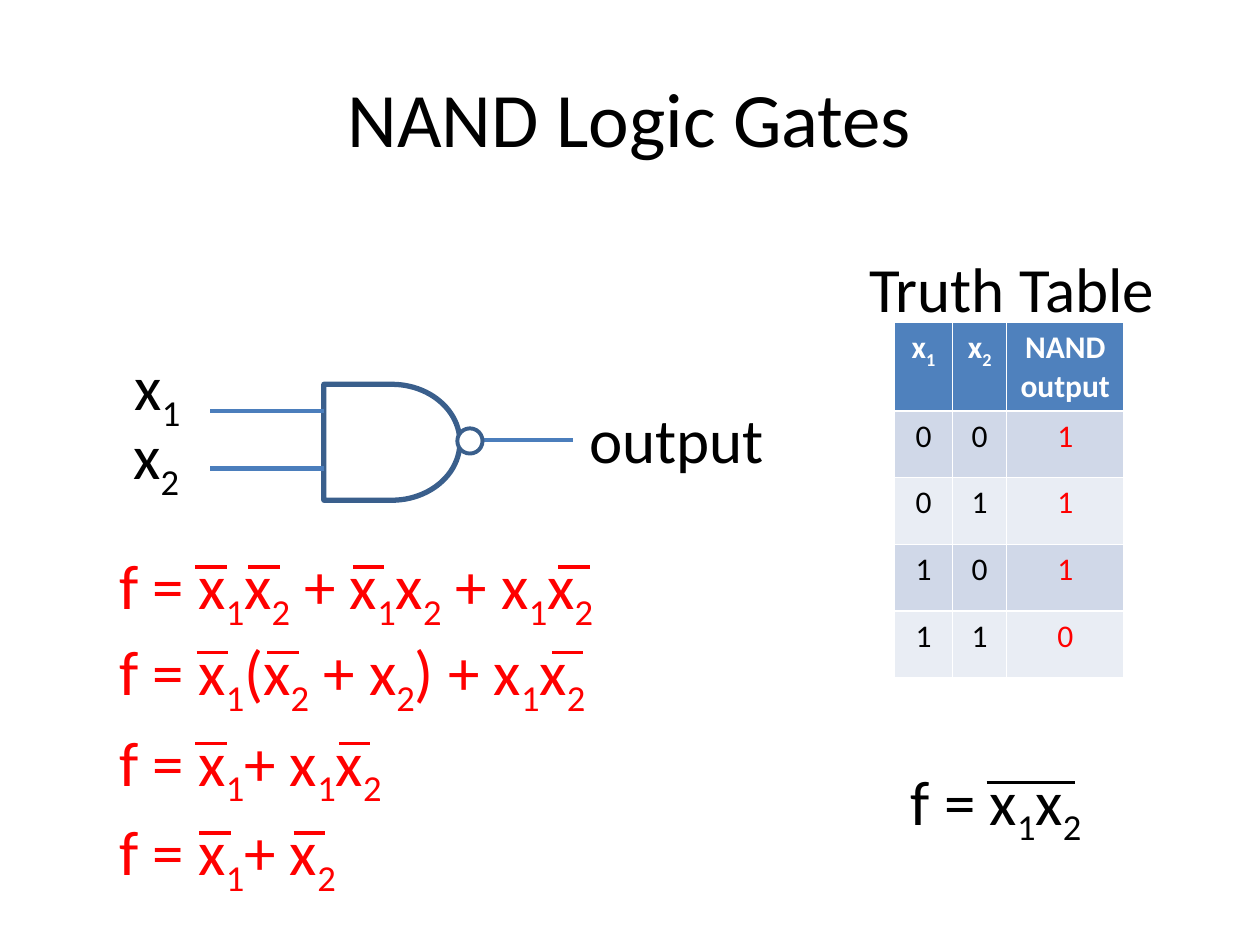
from lxml import etree
from pptx import Presentation
from pptx import util as u
from pptx.dml.color import RGBColor
from pptx.enum import shapes, text
from pptx.oxml.ns import qn

Inches = u.Inches
COLORS = {
    "ink": "000000", "red": "FF0000", "white": "FFFFFF",
    "wire": "4B7EBC", "outline": "3A5F8C",
    "header": "4F81BD", "odd": "D0D8E8", "even": "E9EDF4",
}
FONT = "Calibri"


def rgb(name):
    return RGBColor.from_string(COLORS[name])


def add_spans(para, markup, size, color, bold=False):
    """Write markup in which _ makes the next character a subscript."""
    first, *rest = markup.split("_")
    pieces = [(first, False)]
    for part in rest:
        pieces += [(part[0], True), (part[1:], False)]
    for words, lowered in pieces:
        if not words:
            continue
        span = para.add_run()
        span.text = words
        span.font.name, span.font.size, span.font.bold = FONT, u.Pt(size), bold
        span.font.color.rgb = rgb(color)
        if lowered:
            span._r.get_or_add_rPr().set("baseline", "-25000")


def add_label(page, markup, left, top, width, color="ink"):
    box = page.shapes.add_textbox(Inches(left), Inches(top), Inches(width), Inches(0.71))
    box.text_frame.word_wrap = True
    add_spans(box.text_frame.paragraphs[0], markup, 36, color)


def add_line(page, left, top, length, color, weight):
    line = page.shapes.add_connector(
        shapes.MSO_CONNECTOR.STRAIGHT,
        Inches(left), Inches(top), Inches(left + length), Inches(top))
    line.line.color.rgb = rgb(color)
    line.line.width = u.Pt(weight)
    etree.SubElement(line._element.spPr, qn("a:effectLst"))


def add_outline(page, preset, left, top, width, height, weight):
    shape = page.shapes.add_shape(
        preset, Inches(left), Inches(top), Inches(width), Inches(height))
    shape.shadow.inherit = False
    shape.line.color.rgb = rgb("outline")
    shape.line.width = u.Pt(weight)
    return shape


def add_title(page, words):
    title = page.shapes.title
    title.left, title.top = Inches(0.5), Inches(0.3)
    title.width, title.height = Inches(9), Inches(1.25)
    title.text_frame.vertical_anchor = text.MSO_ANCHOR.MIDDLE
    para = title.text_frame.paragraphs[0]
    para.alignment = text.PP_ALIGN.CENTER
    add_spans(para, words, 44, "ink")


def add_truth_table(page, left, top):
    add_label(page, "Truth Table", left - 0.3, top - 0.63, 2.6)
    inputs = [(a, b) for a in (0, 1) for b in (0, 1)]
    rows = [("x_1", "x_2", "NAND\noutput")]
    rows += [(str(a), str(b), str(1 - a * b)) for a, b in inputs]
    widths = (0.46, 0.43, 0.93)
    table = page.shapes.add_table(
        len(rows), len(widths), Inches(left), Inches(top),
        Inches(sum(widths)), Inches(2.65)).table
    for column, width in zip(table.columns, widths):
        column.width = Inches(width)
    for r, row in enumerate(rows):
        fill = "header" if r == 0 else "odd" if r % 2 else "even"
        for c, markup in enumerate(row):
            cell = table.cell(r, c)
            cell.fill.solid()
            cell.fill.fore_color.rgb = rgb(fill)
            color = "white" if r == 0 else "red" if c == 2 else "ink"
            for i, words in enumerate(markup.split("\n")):
                frame = cell.text_frame
                para = frame.add_paragraph() if i else frame.paragraphs[0]
                para.alignment = text.PP_ALIGN.CENTER
                add_spans(para, words, 18, color, bold=r == 0)


def add_nand_gate(page, left, top):
    """Draw the gate with wires, labels and bubble; left, top is the wire corner."""
    wire, body, height = 0.9, 1.08, 0.92
    body_left, body_right = left + wire, left + wire + body
    gate = add_outline(page, shapes.MSO_SHAPE.FLOWCHART_DELAY,
                       body_left, top, body, height, 3)
    gate.fill.background()
    for start, drop in ((left, 0.21), (left, 0.67), (body_right, 0.44)):
        add_line(page, start, top + drop, wire, "wire", 2.5)
    add_label(page, "x_1", left - 0.7, top - 0.34, 0.78)
    add_label(page, "x_2", left - 0.71, top + 0.21, 0.78)
    add_label(page, "output", body_right + 0.93, top + 0.08, 1.6)
    bubble = add_outline(page, shapes.MSO_SHAPE.OVAL,
                         body_right - 0.02, top + 0.35, 0.2, 0.2, 2.25)
    bubble.fill.solid()
    bubble.fill.fore_color.rgb = rgb("white")


def add_formula(page, markup, left, top, width, bars, color="red", bar_length=0.25):
    """Write a formula with overbars at the given offsets from its left edge."""
    add_label(page, markup, left, top, width, color)
    for offset in bars:
        add_line(page, left + offset, top + 0.21, bar_length, color, 2)


def add_derivation(page, left):
    steps = [
        (4.29, "f = x_1x_2 + x_1x_2 + x_1x_2", (0.7, 1.12, 1.95, 3.58)),
        (4.97, "f = x_1(x_2 + x_2) + x_1x_2", (0.71, 1.27, 3.53)),
        (5.69, "f = x_1+ x_1x_2", (0.7, 1.84)),
        (6.4, "f = x_1+ x_2", (0.73, 1.48)),
    ]
    for top, markup, bars in steps:
        add_formula(page, markup, left, top, 4.15, bars)


def main():
    deck = Presentation()
    deck.slide_width, deck.slide_height = Inches(10), Inches(7.5)
    page = deck.slides.add_slide(deck.slide_layouts.get_by_name("Title Only"))
    add_title(page, "NAND Logic Gates")
    add_truth_table(page, 7.1, 2.56)
    add_nand_gate(page, 1.67, 3.05)
    add_formula(page, "f = x_1x_2", 7.13, 6, 1.86, (0.7,), "ink", 0.7)
    add_derivation(page, 0.85)
    deck.save("out.pptx")


if __name__ == "__main__":
    main()
